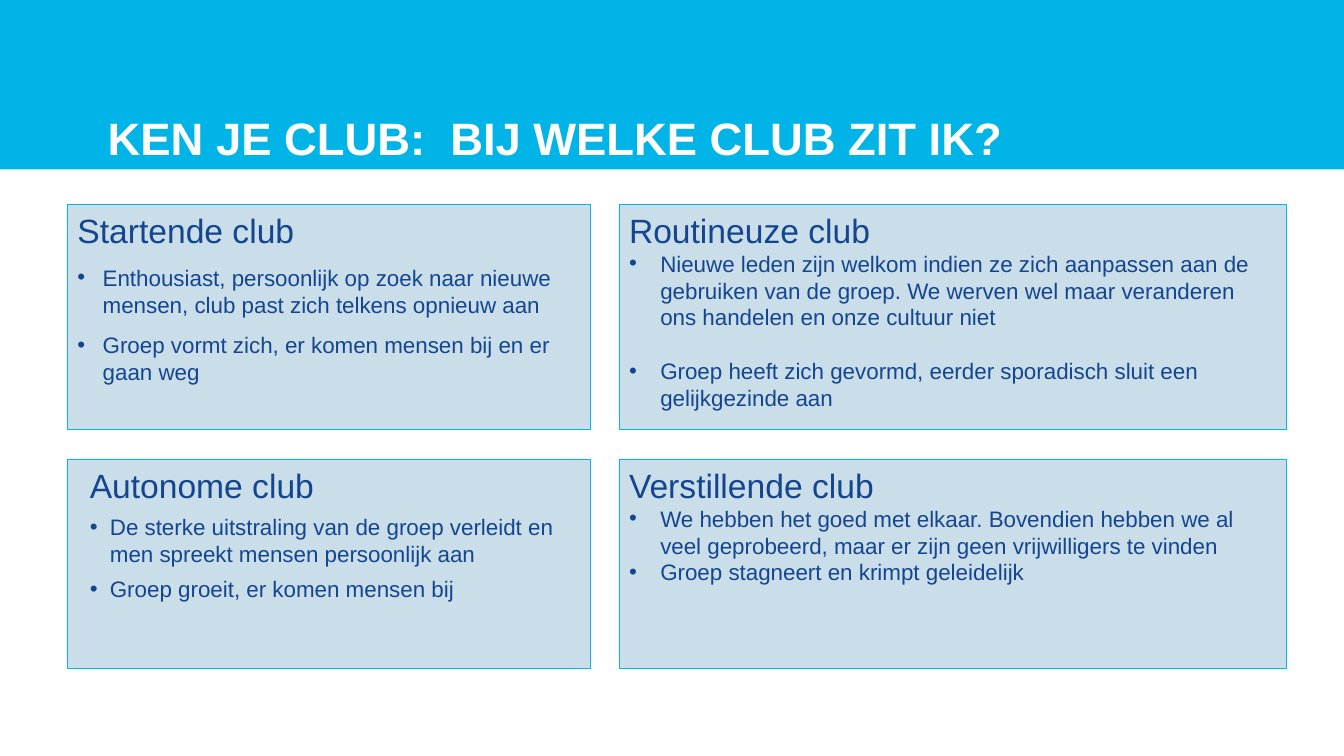
from pptx import Presentation
from pptx.dml.color import RGBColor
from pptx.enum.shapes import MSO_SHAPE
from pptx.enum.text import MSO_ANCHOR, PP_ALIGN
from pptx.oxml.ns import qn
from pptx.util import Inches, Pt
from lxml import etree

RECTANGLE = MSO_SHAPE.RECTANGLE
TOP, BOTTOM = MSO_ANCHOR.TOP, MSO_ANCHOR.BOTTOM
LEFT = PP_ALIGN.LEFT
COLORS = {"banner": "01B4E7", "panel": "C9DEE9", "border": "06B4E6",
          "text": "15458F", "title": "FFFFFF"}
FONT = "Arial"
COLUMNS = [(0.67, 5.19), (6.14, 6.62)]  # left, width
ROWS = [(2.03, 2.23), (4.56, 2.07)]  # top, height

# Per club: column, row, side inset, heading indent, bullet indent and hang,
# space before each bullet, space after, heading and bullets
CLUBS = [
    (0, 0, 0.1, 0, 0.25, 0.25, (10, 10), 0, "Startende club",
     ["Enthousiast, persoonlijk op zoek naar nieuwe mensen, club past zich telkens opnieuw aan",
      "Groep vormt zich, er komen mensen bij en er gaan weg"]),
    (0, 1, 0, 0.22, 0.42, 0.2, (2, 2), 4, "Autonome club",
     ["De sterke uitstraling van de groep verleidt en men spreekt mensen persoonlijk aan",
      "Groep groeit, er komen mensen bij"]),
    (1, 0, 0.1, 0, 0.31, 0.31, (0, 19), 0, "Routineuze club",
     ["Nieuwe leden zijn welkom indien ze zich aanpassen aan de gebruiken van de groep. "
      "We werven wel maar veranderen ons handelen en onze cultuur niet",
      "Groep heeft zich gevormd, eerder sporadisch sluit een gelijkgezinde aan"]),
    (1, 1, 0.1, 0, 0.31, 0.31, (0, 0), 0, "Verstillende club",
     ["We hebben het goed met elkaar. Bovendien hebben we al veel geprobeerd, "
      "maar er zijn geen vrijwilligers te vinden",
      "Groep stagneert en krimpt geleidelijk"]),
]


def write(paragraph, text, size, color, bold=False):
    run = paragraph.add_run()
    run.text = text
    for name, value in {"name": FONT, "size": Pt(size), "bold": bold}.items():
        setattr(run.font, name, value)
    run.font.color.rgb = RGBColor.from_string(COLORS[color])


def add_rectangle(left, top, width, height, fill):
    shape = slide.shapes.add_shape(RECTANGLE, Inches(left), Inches(top),
                                   Inches(width), Inches(height))
    shape.shadow.inherit = False
    shape.fill.solid()
    shape.fill.fore_color.rgb = RGBColor.from_string(COLORS[fill])
    return shape


prs = Presentation()
prs.slide_width, prs.slide_height = Inches(13.33), Inches(7.5)
slide = prs.slides.add_slide(prs.slide_layouts[6])

# Banner and title
banner = add_rectangle(0, 0, 13.33, 1.68, "banner")
banner.line.fill.background()

title = slide.shapes.add_textbox(Inches(0.97), Inches(1.07), Inches(9.58), Inches(0.67))
title_format = {"word_wrap": True, "vertical_anchor": BOTTOM,
                "margin_top": 0, "margin_bottom": Inches(0.1)}
for name, value in title_format.items():
    setattr(title.text_frame, name, value)
heading = title.text_frame.paragraphs[0]
heading.line_spacing = 0.9
write(heading, "KEN JE CLUB:  BIJ WELKE CLUB ZIT IK?", 32.4, "title", bold=True)

# Four club panels
for column, row, inset, heading_indent, indent, hang, gaps, after, club, traits in CLUBS:
    left, width = COLUMNS[column]
    top, height = ROWS[row]
    panel = add_rectangle(left, top, width, height, "panel")
    panel.line.color.rgb = RGBColor.from_string(COLORS["border"])
    panel.line.width = Pt(0.75)

    frame = panel.text_frame
    panel_format = {"word_wrap": True, "vertical_anchor": TOP,
                    "margin_left": Inches(inset), "margin_right": Inches(inset)}
    for name, value in panel_format.items():
        setattr(frame, name, value)

    heading = frame.paragraphs[0]
    heading.alignment = LEFT
    heading.space_after = Pt(after)
    heading._p.get_or_add_pPr().set("marL", str(Inches(heading_indent)))
    write(heading, club, 24, "text")

    for trait, gap in zip(traits, gaps):
        bullet = frame.add_paragraph()
        bullet.alignment = LEFT
        bullet.space_before = Pt(gap)
        bullet.space_after = Pt(after)
        properties = bullet._p.get_or_add_pPr()
        properties.set("marL", str(Inches(indent)))
        properties.set("indent", str(-Inches(hang)))
        etree.SubElement(properties, qn("a:buFont"), typeface=FONT)
        etree.SubElement(properties, qn("a:buChar"), char="•")
        write(bullet, trait, 16, "text")

prs.save("out.pptx")
